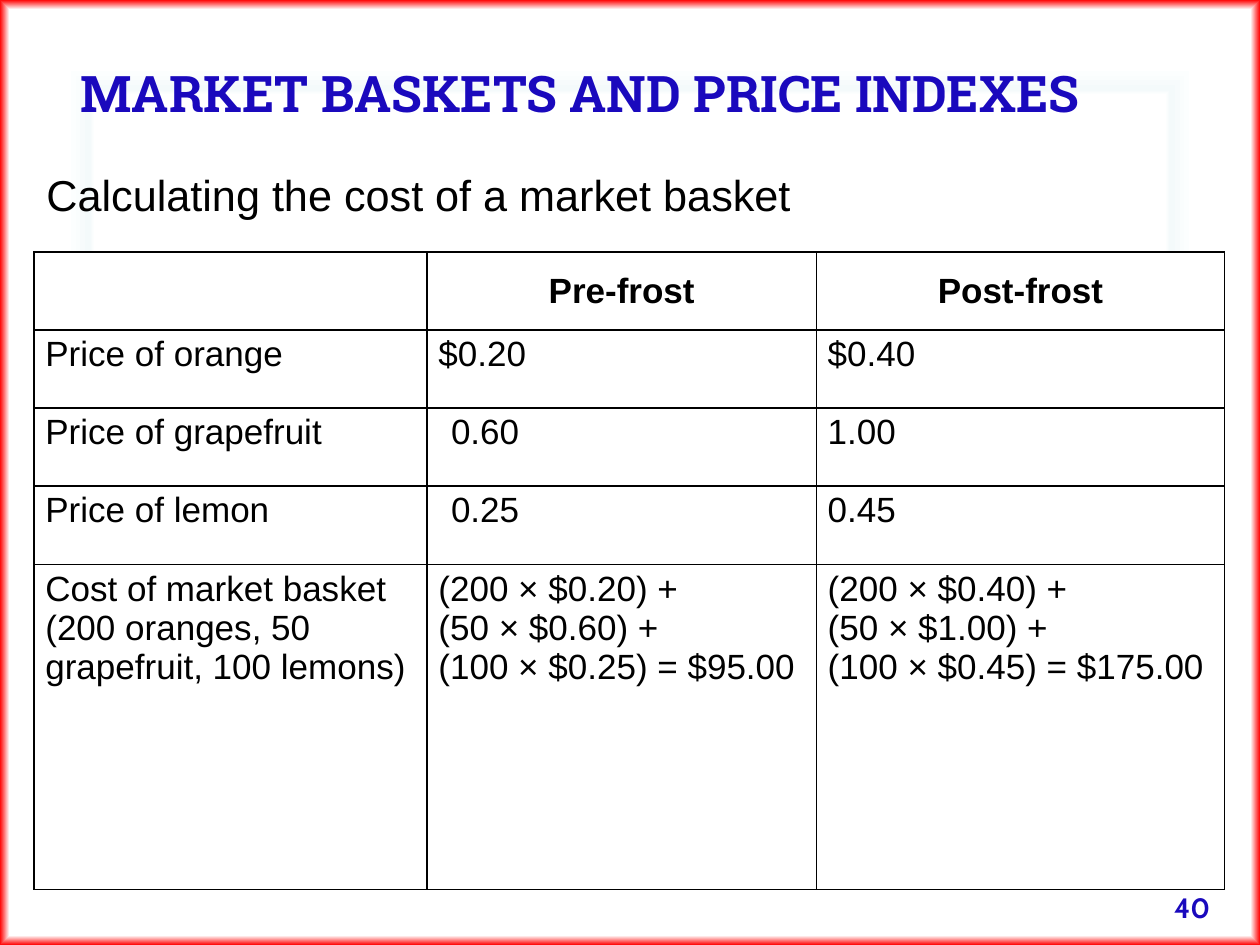
from lxml import etree
from pptx import Presentation
from pptx.dml.color import RGBColor
from pptx.enum.text import MSO_ANCHOR, PP_ALIGN
from pptx.oxml.ns import qn
from pptx.util import Inches, Pt

MIDDLE, TOP = MSO_ANCHOR.MIDDLE, MSO_ANCHOR.TOP
LEFT, CENTER = PP_ALIGN.LEFT, PP_ALIGN.CENTER
BLUE = RGBColor(0x1A, 0x09, 0xBD)
BLACK = RGBColor(0, 0, 0)
WHITE = RGBColor(0xFF, 0xFF, 0xFF)
PALE = RGBColor(0xF4, 0xFA, 0xFB)
RED = RGBColor(0xFF, 0, 0)


def format_text(frame, size, font, color, bold=False, align=LEFT):
    for paragraph in frame.paragraphs:
        paragraph.alignment = align
        for run in paragraph.runs:
            run.font.size = Pt(size)
            run.font.name = font
            run.font.color.rgb = color
            run.font.bold = bold


def add_color(parent, color):
    etree.SubElement(parent, qn("a:srgbClr"), val=str(color))


prs = Presentation()
prs.slide_width, prs.slide_height = Inches(10), Inches(7.5)
slide = prs.slides.add_slide(prs.slide_layouts[5])

# Background: gradient running from the centre to a red edge
slide.background.fill.gradient()
gradient = slide.element.find(".//" + qn("a:gradFill"))
for child in list(gradient):
    gradient.remove(child)
stops = etree.SubElement(gradient, qn("a:gsLst"))
for percent, color in [(76, WHITE), (80, WHITE), (81, PALE),
                       (86, WHITE), (98, WHITE), (100, RED)]:
    add_color(etree.SubElement(stops, qn("a:gs"), pos=str(percent * 1000)), color)
shape_path = etree.SubElement(gradient, qn("a:path"), path="shape")
etree.SubElement(shape_path, qn("a:fillToRect"),
                 {side: "50000" for side in "ltrb"})

# Title and subtitle
title = slide.shapes.title
title.left, title.top = Inches(0.54), Inches(0.26)
title.width, title.height = Inches(9.46), Inches(0.95)
title.text_frame.text = "MARKET BASKETS AND PRICE INDEXES"
title.text_frame.vertical_anchor = MIDDLE
title.text_frame.paragraphs[0].space_before = Pt(5.5)
format_text(title.text_frame, 28.8, "Roboto Slab", BLUE, bold=True)

subtitle = slide.shapes.add_textbox(
    Inches(0.27), Inches(1.29), Inches(9.46), Inches(0.6)).text_frame
subtitle.word_wrap = True
subtitle.text = "Calculating the cost of a market basket"
subtitle.paragraphs[0].space_before = Pt(5.5)
format_text(subtitle, 24.7, "Arial", BLACK)

# Price table
rows = [
    ["", "Pre-frost", "Post-frost"],
    ["Price of orange", "$0.20", "$0.40"],
    ["Price of grapefruit", "0.60", "1.00"],
    ["Price of lemon", "0.25", "0.45"],
    ["Cost of market basket\n(200 oranges, 50 grapefruit, 100 lemons)",
     "(200 × $0.20) +\n(50 × $0.60) +\n(100 × $0.25) = $95.00",
     "(200 × $0.40) +\n(50 × $1.00) +\n(100 × $0.45) = $175.00"],
]
prices = slide.shapes.add_table(
    len(rows), 3, Inches(0.27), Inches(2), Inches(9.46), Inches(5.07)).table
for column, width in zip(prices.columns, [3.12, 3.09, 3.24]):
    column.width = Inches(width)
for row, height in zip(prices.rows, [0.62] * 4 + [2.58]):
    row.height = Inches(height)

for r, texts in enumerate(rows):
    header = r == 0
    for c, text in enumerate(texts):
        cell = prices.cell(r, c)
        cell.text_frame.text = text
        cell.vertical_anchor = MIDDLE if header else TOP
        # Pre-frost prices without a dollar sign align with the digits above
        unsigned = c == 1 and r in (2, 3)
        cell.margin_left = Inches(0.19 if unsigned else 0.09)
        cell.margin_right = Inches(0.09)
        cell.margin_top = cell.margin_bottom = Inches(0.04)
        format_text(cell.text_frame, 20, "Arial", BLACK, bold=header,
                    align=CENTER if header else LEFT)
        cell.fill.solid()
        cell.fill.fore_color.rgb = WHITE
        properties = cell._tc.get_or_add_tcPr()
        for position, side in enumerate(["a:lnL", "a:lnR", "a:lnT", "a:lnB"]):
            border = etree.Element(qn(side), w=str(Pt(1)))
            add_color(etree.SubElement(border, qn("a:solidFill")), BLACK)
            properties.insert(position, border)

# Page number
page_number = slide.shapes.add_textbox(
    Inches(9.22), Inches(7.02), Inches(0.67), Inches(0.25)).text_frame
page_number.word_wrap = True
page_number.text = "40"
format_text(page_number, 16, "Cabin", BLUE, bold=True)

prs.save("out.pptx")
